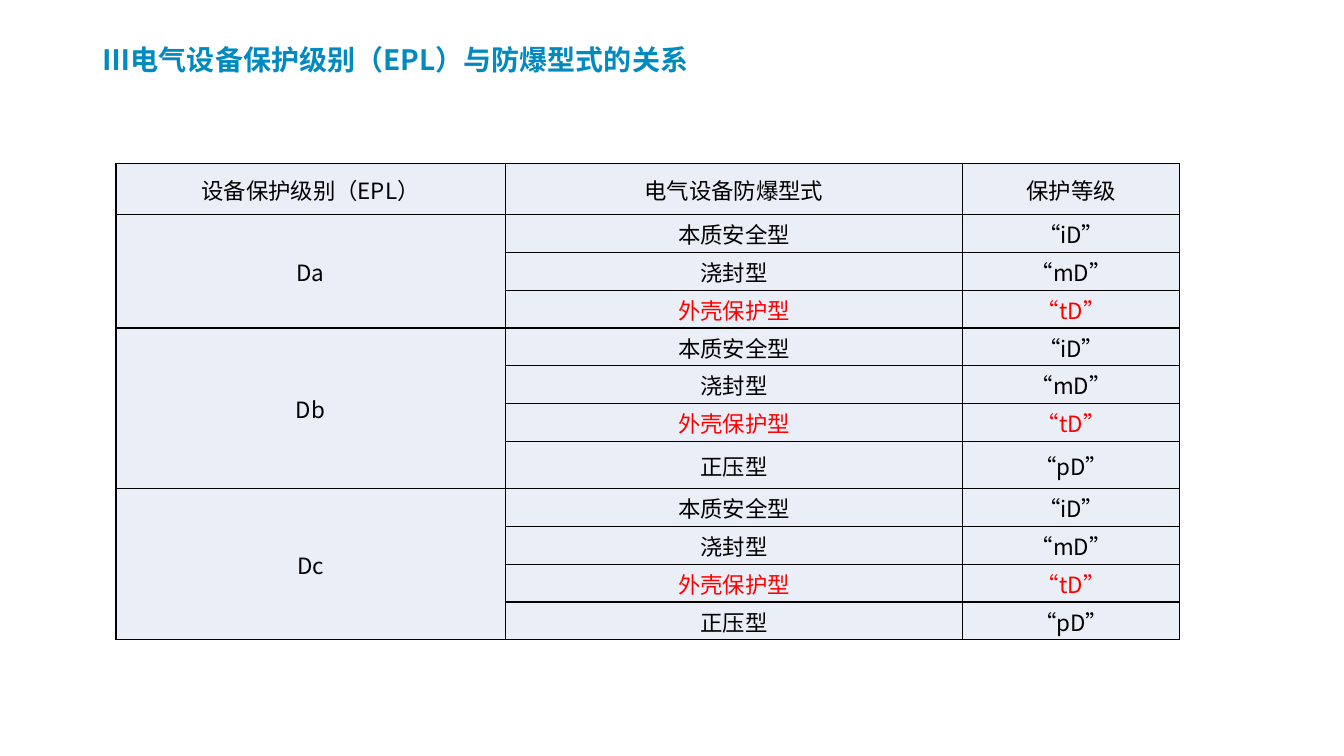
from dataclasses import dataclass
from lxml import etree
from pptx import Presentation
from pptx import util as u
from pptx.dml.color import RGBColor
from pptx.enum import text
from pptx.oxml import ns

# Content
TITLE = "Ⅲ电气设备保护级别（EPL）与防爆型式的关系"
HEADER = ("设备保护级别（EPL）", "电气设备防爆型式", "保护等级")
INTRINSIC = ("本质安全型", "“iD”")
ENCAPSULATED = ("浇封型", "“mD”")
ENCLOSURE = ("外壳保护型", "“tD”")
PRESSURIZED = ("正压型", "“pD”")
COMMON = [INTRINSIC, ENCAPSULATED, ENCLOSURE]
LEVELS = [
    ("Da", COMMON),
    ("Db", COMMON + [PRESSURIZED]),
    ("Dc", COMMON + [PRESSURIZED]),
]
COL_WIDTHS = (3.86, 4.54, 2.15)
ROW_HEIGHT = 0.375
TALL_ROWS = {0: 0.51, 7: 0.47}


@dataclass(frozen=True)
class Theme:
    font: str = "Noto Sans CJK SC"
    title: str = "008AC0"
    ink: str = "000000"
    accent: str = "FF0000"
    cell: str = "EAEFF7"
    title_size: int = 20
    cell_size: int = 16
    border: int = 1


THEME = Theme()


def style_text(p, size, color, bold=False):
    for r in p.runs:
        r.font.size = u.Pt(size)
        r.font.bold = bold
        r.font.color.rgb = RGBColor.from_string(color)
        r.font.name = THEME.font
        ea = etree.SubElement(r.font._element, ns.qn("a:ea"))
        ea.set("typeface", THEME.font)


def set_margins(target, left, top, right, bottom):
    target.margin_left, target.margin_top = u.Inches(left), u.Inches(top)
    target.margin_right, target.margin_bottom = u.Inches(right), u.Inches(bottom)


def add_borders(cell):
    tc_pr = cell._tc.get_or_add_tcPr()
    for i, side in enumerate(("lnL", "lnR", "lnT", "lnB")):
        ln = etree.Element(ns.qn("a:" + side), w=str(u.Pt(THEME.border)))
        fill = etree.SubElement(ln, ns.qn("a:solidFill"))
        etree.SubElement(fill, ns.qn("a:srgbClr"), val=THEME.ink)
        tc_pr.insert(i, ln)


def fill_cell(cell, words, color):
    cell.fill.solid()
    cell.fill.fore_color.rgb = RGBColor.from_string(THEME.cell)
    add_borders(cell)
    set_margins(cell, 0.01, 0.01, 0.01, 0)
    cell.vertical_anchor = text.MSO_ANCHOR.MIDDLE
    p = cell.text_frame.paragraphs[0]
    p.text = words
    p.alignment = text.PP_ALIGN.CENTER
    style_text(p, THEME.cell_size, color)


def add_title(s):
    sp = s.shapes.title
    sp.left, sp.top = u.Inches(0.92), u.Inches(0.36)
    sp.width, sp.height = u.Inches(6.48), u.Inches(0.45)
    tf = sp.text_frame
    tf.text = TITLE
    tf.word_wrap = True
    tf.auto_size = text.MSO_AUTO_SIZE.NONE
    tf.vertical_anchor = text.MSO_ANCHOR.MIDDLE
    set_margins(tf, 0.1, 0.05, 0.1, 0)
    p = tf.paragraphs[0]
    p.alignment = text.PP_ALIGN.LEFT
    p.line_spacing = 0.9
    style_text(p, THEME.title_size, THEME.title, bold=True)


def add_level_table(s):
    # One row per protection type, level named on the first row of its group
    rows = [HEADER]
    groups = []
    for level, kinds in LEVELS:
        groups.append((len(rows), len(rows) + len(kinds) - 1))
        rows += [(level if i == 0 else "", *kind) for i, kind in enumerate(kinds)]
    heights = [TALL_ROWS.get(i, ROW_HEIGHT) for i in range(len(rows))]

    table = s.shapes.add_table(
        len(rows), len(HEADER), u.Inches(1.15), u.Inches(1.62),
        u.Inches(sum(COL_WIDTHS)), u.Inches(sum(heights))).table
    table.first_row = table.horz_banding = False
    for col, width in zip(table.columns, COL_WIDTHS):
        col.width = u.Inches(width)
    for row, height in zip(table.rows, heights):
        row.height = u.Inches(height)

    # Cells, with the enclosure type picked out
    for i, row in enumerate(rows):
        for j, words in enumerate(row):
            color = THEME.accent if words in ENCLOSURE else THEME.ink
            fill_cell(table.cell(i, j), words, color)
    for first, last in groups:
        table.cell(first, 0).merge(table.cell(last, 0))


def main():
    prs = Presentation()
    prs.slide_width, prs.slide_height = u.Inches(13.33), u.Inches(7.5)
    s = prs.slides.add_slide(prs.slide_layouts[5])
    add_title(s)
    add_level_table(s)
    prs.save("out.pptx")


if __name__ == "__main__":
    main()
